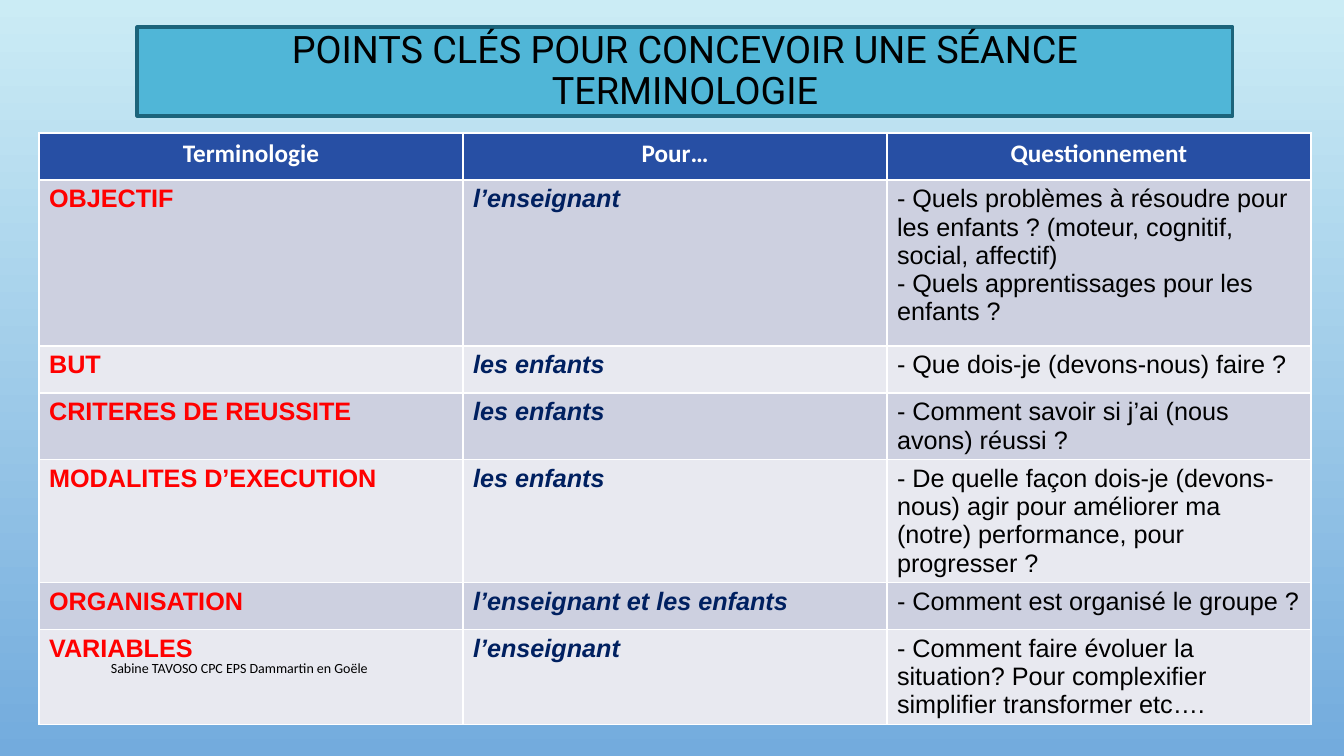
import pptx
import pptx.util
import pptx.dml.color
import pptx.enum.text

RGBColor = pptx.dml.color.RGBColor
Pt = pptx.util.Pt
PP_ALIGN = pptx.enum.text.PP_ALIGN
MSO_ANCHOR = pptx.enum.text.MSO_ANCHOR

TITLE = "POINTS CLÉS POUR CONCEVOIR UNE SÉANCE\vTERMINOLOGIE"
AUTHOR = "Sabine TAVOSO CPC EPS Dammartin en Goële"
HEADERS = ("Terminologie", "Pour…", "Questionnement")
ROWS = [
    ("OBJECTIF", "l’enseignant",
     "- Quels problèmes à résoudre pour les enfants ? (moteur, cognitif, social, affectif)\n"
     "- Quels apprentissages pour les enfants ?"),
    ("BUT", "les enfants", "- Que dois-je (devons-nous) faire ?"),
    ("CRITERES DE REUSSITE", "les enfants", "- Comment savoir si j’ai (nous avons) réussi ?"),
    ("MODALITES D’EXECUTION", "les enfants",
     "- De quelle façon dois-je (devons-nous) agir pour améliorer ma (notre) performance, pour progresser ?"),
    ("ORGANISATION", "l’enseignant et les enfants", "- Comment est organisé le groupe ?"),
    ("VARIABLES", "l’enseignant",
     "- Comment faire évoluer la situation? Pour complexifier simplifier transformer etc…."),
]
ROW_HEIGHTS = (47, 166, 47, 66, 123, 47, 95)
COLUMN_WIDTH = 424

SKY_TOP = RGBColor(0xCB, 0xEC, 0xF5)
SKY_BOTTOM = RGBColor(0x73, 0xAB, 0xDD)
TITLE_FILL = RGBColor(0x50, 0xB6, 0xD7)
TITLE_LINE = RGBColor(0x1C, 0x64, 0x7B)
HEADER_FILL = RGBColor(0x27, 0x4F, 0xA4)
BAND_FILLS = (RGBColor(0xCD, 0xD0, 0xE0), RGBColor(0xE8, 0xE9, 0xF0))
WHITE = RGBColor(0xFF, 0xFF, 0xFF)
BLACK = RGBColor(0, 0, 0)
RED = RGBColor(0xFF, 0, 0)
NAVY = RGBColor(0, 0x20, 0x60)

HEADER_STYLE = ("Calibri", 18, WHITE, True, False)
COLUMN_STYLES = (
    ("Arial", 18, RED, True, False),
    ("Arial", 18, NAVY, True, True),
    ("Arial", 18, BLACK, False, False),
)


def px(length):
    return round(length * 914400 / 100.8)


def box(left, top, width, height):
    return [px(length) for length in (left, top, width, height)]


def write(text_frame, text, style, alignment=PP_ALIGN.LEFT):
    text_frame.text = text
    for paragraph in text_frame.paragraphs:
        paragraph.alignment = alignment
        for run in paragraph.runs:
            font = run.font
            font.name, size, color, font.bold, font.italic = style
            font.size = Pt(size)
            font.color.rgb = color


def add_background(slide):
    fill = slide.background.fill
    fill.gradient()
    fill.gradient_angle = 270
    for stop, color in zip(fill.gradient_stops, (SKY_TOP, SKY_BOTTOM)):
        stop.color.rgb = color


def add_title(slide):
    title = slide.shapes.title
    title.left, title.top, title.width, title.height = box(137, 27, 1096, 89)
    title.fill.solid()
    title.fill.fore_color.rgb = TITLE_FILL
    title.line.color.rgb = TITLE_LINE
    title.line.width = Pt(2.25)
    text_frame = title.text_frame
    write(text_frame, TITLE, ("Roboto", 27, BLACK, False, False), PP_ALIGN.CENTER)
    text_frame.auto_size = pptx.enum.text.MSO_AUTO_SIZE.NONE
    text_frame.vertical_anchor = MSO_ANCHOR.MIDDLE
    text_frame.paragraphs[0].line_spacing = 0.9


def add_terms(slide):
    size = box(39, 133, COLUMN_WIDTH * len(HEADERS), sum(ROW_HEIGHTS))
    table = slide.shapes.add_table(len(ROW_HEIGHTS), len(HEADERS), *size).table
    for column in table.columns:
        column.width = px(COLUMN_WIDTH)
    for row, height in zip(table.rows, ROW_HEIGHTS):
        row.height = px(height)
    for row_index, texts in enumerate([HEADERS] + ROWS):
        for column_index, text in enumerate(texts):
            cell = table.cell(row_index, column_index)
            cell.fill.solid()
            if row_index == 0:
                cell.fill.fore_color.rgb = HEADER_FILL
                write(cell.text_frame, text, HEADER_STYLE, PP_ALIGN.CENTER)
            else:
                cell.fill.fore_color.rgb = BAND_FILLS[(row_index - 1) % 2]
                write(cell.text_frame, text, COLUMN_STYLES[column_index])


def add_author(slide):
    text_frame = slide.shapes.add_textbox(*box(101, 648, 736, 40)).text_frame
    text_frame.word_wrap = True
    text_frame.vertical_anchor = MSO_ANCHOR.MIDDLE
    write(text_frame, AUTHOR, ("Calibri", 10, BLACK, False, False))


def main():
    presentation = pptx.Presentation()
    presentation.slide_width = px(1344)
    presentation.slide_height = px(756)
    slide = presentation.slides.add_slide(presentation.slide_layouts[5])
    add_background(slide)
    add_title(slide)
    add_terms(slide)
    add_author(slide)
    presentation.save("out.pptx")


if __name__ == "__main__":
    main()
